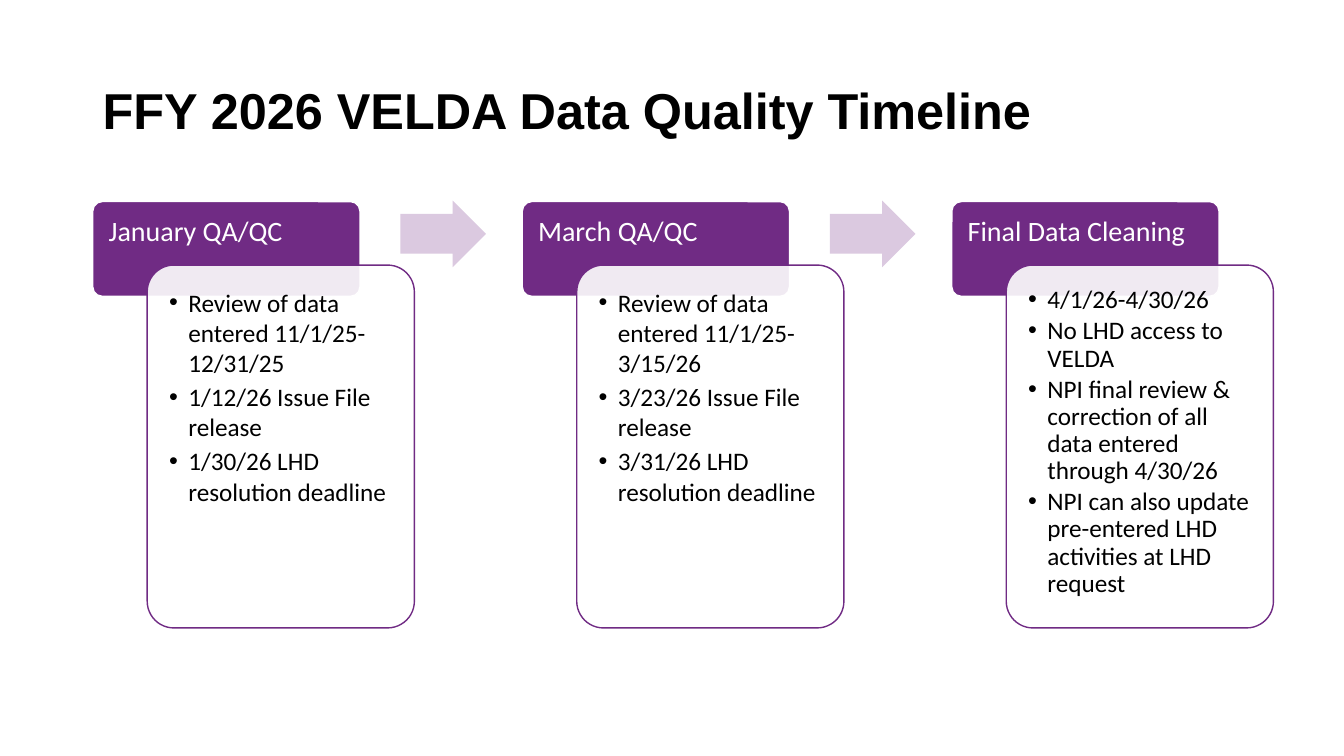
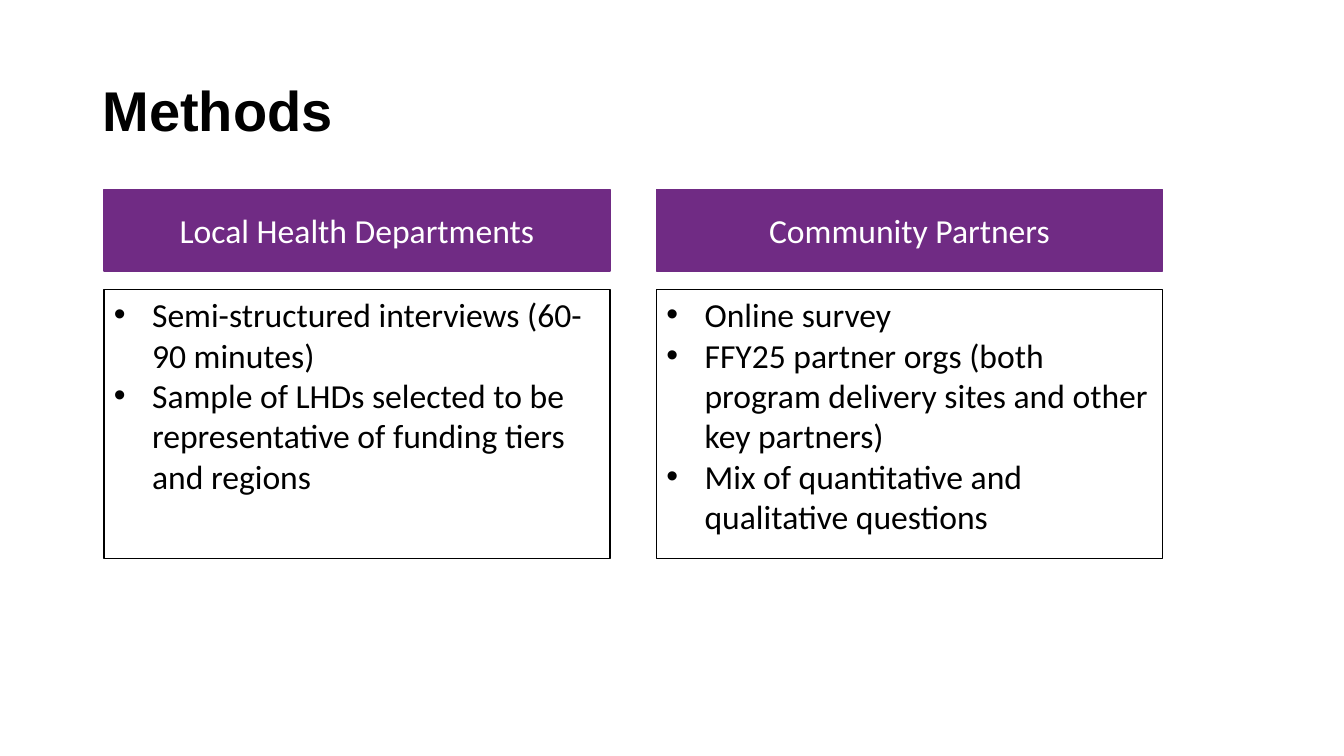
import pptx
import pptx.dml.color
import pptx.enum.shapes
import pptx.enum.text
import pptx.oxml.ns
import pptx.util
from lxml import etree

Inches = pptx.util.Inches
Pt = pptx.util.Pt
SHAPE = pptx.enum.shapes.MSO_SHAPE
ALIGN = pptx.enum.text.PP_ALIGN
ANCHOR = pptx.enum.text.MSO_ANCHOR
qn = pptx.oxml.ns.qn

COLORS = {"purple": "702B84", "white": "FFFFFF", "black": "000000"}
TITLE_FONT = "Arial"
BODY_FONT = "Calibri"

STAGES = [
    ("January QA/QC", 1.0, [
        "Review of data entered 11/1/25-12/31/25",
        "1/12/26 Issue File release",
        "1/30/26 LHD resolution deadline",
    ]),
    ("March QA/QC", 1.0, [
        "Review of data entered 11/1/25-3/15/26",
        "3/23/26 Issue File release",
        "3/31/26 LHD resolution deadline",
    ]),
    ("Final Data Cleaning", 0.9, [
        "4/1/26-4/30/26",
        "No LHD access to VELDA",
        "NPI final review & correction of all data entered through 4/30/26",
        "NPI can also update pre-entered LHD activities at LHD request",
    ]),
]
METHODS = [
    ("Local Health Departments", [
        "Semi-structured interviews (60-90 minutes)",
        "Sample of LHDs selected to be representative of funding tiers and regions",
    ]),
    ("Community Partners", [
        "Online survey",
        "FFY25 partner orgs (both program delivery sites and other key partners)",
        "Mix of quantitative and qualitative questions",
    ]),
]


def rgb(name):
    return pptx.dml.color.RGBColor.from_string(COLORS[name])


def set_opacity(shape, percent):
    color = shape.fill._xPr.find(qn("a:solidFill"))[0]
    etree.SubElement(color, qn("a:alpha")).set("val", str(percent * 1000))


def add_block(page, kind, at, fill, line=None, adjustments=(), opacity=100):
    shape = page.shapes.add_shape(kind, *map(Inches, at))
    shape.shadow.inherit = False
    for index, value in enumerate(adjustments):
        shape.adjustments[index] = value
    shape.fill.solid()
    shape.fill.fore_color.rgb = rgb(fill)
    if opacity < 100:
        set_opacity(shape, opacity)
    if line:
        shape.line.color.rgb = rgb(line)
        shape.line.width = Pt(1)
    else:
        shape.line.fill.background()
    return shape


def set_bullet(para, indent):
    props = para._p.get_or_add_pPr()
    props.set("marL", str(Inches(indent)))
    props.set("indent", str(-Inches(indent)))
    etree.SubElement(props, qn("a:buFont")).set("typeface", "Arial")
    etree.SubElement(props, qn("a:buChar")).set("char", "•")


def write(shape, lines, size, color="black", font=BODY_FONT, bold=False,
          align=ALIGN.LEFT, anchor=ANCHOR.TOP, margins=(0.1, 0.05, 0.1, 0.05),
          bullet=None, spacing=1.0, after=0):
    """Fill a shape with one paragraph per line; margins run left, top, right, bottom."""
    frame = shape.text_frame
    frame.word_wrap = True
    frame.vertical_anchor = anchor
    (frame.margin_left, frame.margin_top,
     frame.margin_right, frame.margin_bottom) = map(Inches, margins)
    for index, line in enumerate(lines):
        para = frame.add_paragraph() if index else frame.paragraphs[0]
        if bullet:
            set_bullet(para, bullet)
        para.alignment = align
        para.line_spacing = spacing
        para.space_after = Pt(after)
        span = para.add_run()
        span.text = line
        span.font.name = font
        span.font.size = Pt(size)
        span.font.bold = bold
        span.font.color.rgb = rgb(color)


def add_page(deck, title, size):
    page = deck.slides.add_slide(deck.slide_layouts[6])
    box = page.shapes.add_textbox(*map(Inches, (0.92, 0.4, 11.5, 1.45)))
    write(box, [title], size, font=TITLE_FONT, bold=True,
          anchor=ANCHOR.MIDDLE, spacing=0.9)
    return page


def add_stage(page, left, heading, items, spacing):
    header = add_block(page, SHAPE.ROUNDED_RECTANGLE, (left, 2, 2.65, 0.94),
                       "purple", "white", [0.1])
    write(header, [heading], 20, "white", margins=(0.13, 0.13, 0.13, 0.08),
          spacing=0.9)
    card = add_block(page, SHAPE.ROUNDED_RECTANGLE, (left + 0.54, 2.63, 2.65, 3.6),
                     "white", "purple", [0.1], opacity=90)
    write(card, items, 18, margins=(0.14,) * 4, bullet=0.19,
          spacing=spacing, after=2.7)


def add_timeline(deck):
    page = add_page(deck, "FFY 2026 VELDA Data Quality Timeline", 36)
    for index, (heading, spacing, items) in enumerate(STAGES):
        left = 0.92 + 4.26 * index
        add_stage(page, left, heading, items, spacing)
        if index < len(STAGES) - 1:
            add_block(page, SHAPE.RIGHT_ARROW, (left + 3.05, 1.99, 0.85, 0.66),
                      "purple", adjustments=[0.6, 0.5], opacity=25)


def add_methods(deck):
    page = add_page(deck, "Methods", 40)
    for index, (heading, items) in enumerate(METHODS):
        left = 1.03 + 5.48 * index
        header = add_block(page, SHAPE.RECTANGLE, (left, 1.88, 5.02, 0.81),
                           "purple", "purple")
        write(header, [heading], 24, "white", align=ALIGN.CENTER,
              anchor=ANCHOR.MIDDLE)
        panel = add_block(page, SHAPE.RECTANGLE, (left, 2.87, 5.02, 2.67),
                          "white", "black")
        write(panel, items, 24, bullet=0.38)


def main():
    deck = pptx.Presentation()
    deck.slide_width = Inches(13.33)
    deck.slide_height = Inches(7.5)
    add_timeline(deck)
    add_methods(deck)
    deck.save("out.pptx")


if __name__ == "__main__":
    main()
